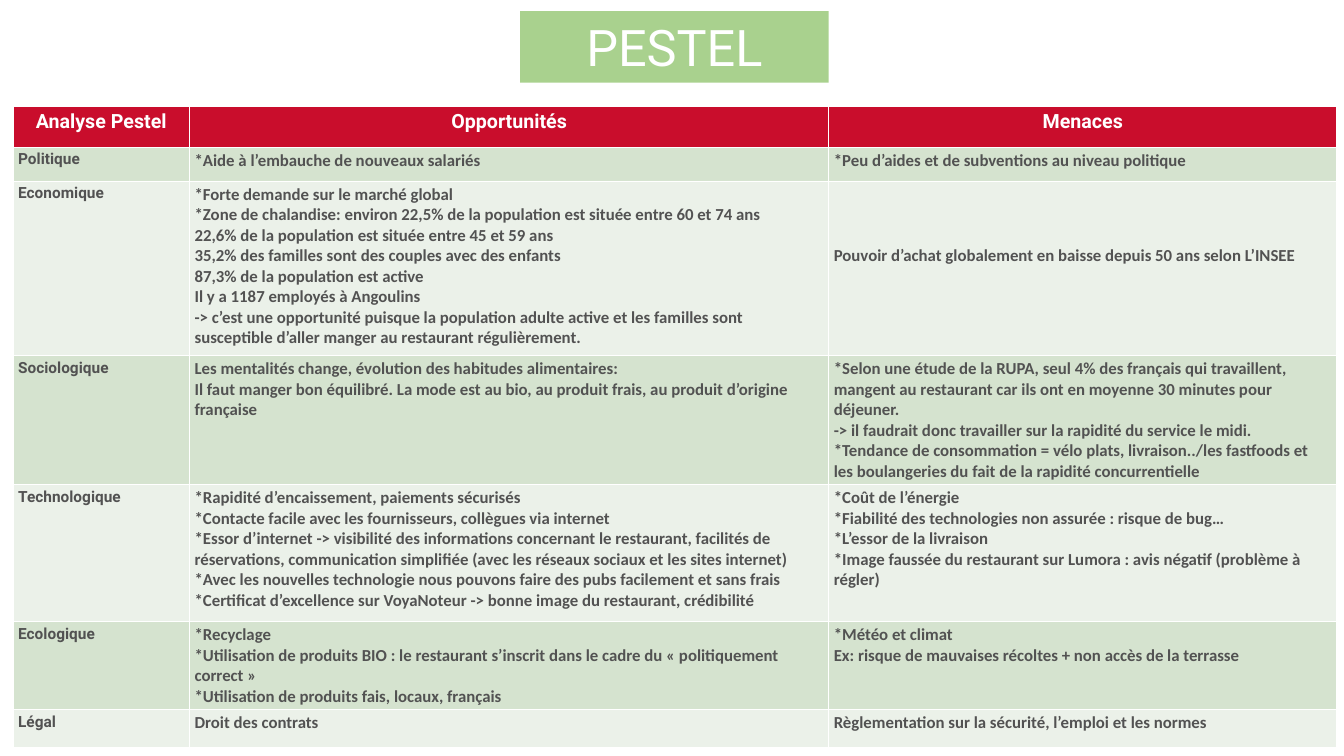
import pptx
import pptx.util
import pptx.dml.color
import pptx.enum.text

Inches = pptx.util.Inches
Pt = pptx.util.Pt
CENTER = pptx.enum.text.PP_ALIGN.CENTER
LEFT = pptx.enum.text.PP_ALIGN.LEFT


def paint(fill, color):
    fill.solid()
    fill.fore_color.rgb = pptx.dml.color.RGBColor.from_string(color)


def write(tf, text, font, size, color, bold, align):
    tf.text = text
    for p in tf.paragraphs:
        p.alignment = align
        for r in p.runs:
            r.font.name = font
            r.font.size = Pt(size)
            r.font.bold = bold
            paint(r.font.fill, color)


header = ["Analyse Pestel", "Opportunités", "Menaces"]
factors = [
    ["Politique",
     ["*Aide à l’embauche de nouveaux salariés"],
     ["*Peu d’aides et de subventions au niveau politique"]],
    ["Economique",
     ["*Forte demande sur le marché global",
      "*Zone de chalandise: environ 22,5% de la population est située entre 60 et 74 ans",
      "22,6% de la population est située entre 45 et 59 ans",
      "35,2% des familles sont des couples avec des enfants",
      "87,3% de la population est active",
      "Il y a 1187 employés à Angoulins",
      "-> c’est une opportunité puisque la population adulte active et les familles sont "
      "susceptible d’aller manger au restaurant régulièrement."],
     ["Pouvoir d’achat globalement en baisse depuis 50 ans selon L’INSEE"]],
    ["Sociologique",
     ["Les mentalités change, évolution des habitudes alimentaires:",
      "Il faut manger bon équilibré. La mode est au bio, au produit frais, "
      "au produit d’origine française"],
     ["*Selon une étude de la RUPA, seul 4% des français qui travaillent, "
      "mangent au restaurant car ils ont en moyenne 30 minutes pour déjeuner.",
      "-> il faudrait donc travailler sur la rapidité du service le midi.",
      "*Tendance de consommation = vélo plats, livraison../les fastfoods et les "
      "boulangeries du fait de la rapidité concurrentielle"]],
    ["Technologique",
     ["*Rapidité d’encaissement, paiements sécurisés",
      "*Contacte facile avec les fournisseurs, collègues via internet",
      "*Essor d’internet -> visibilité des informations concernant le restaurant, facilités de "
      "réservations, communication simplifiée (avec les réseaux sociaux et les sites internet)",
      "*Avec les nouvelles technologie nous pouvons faire des pubs facilement et sans frais",
      "*Certificat d’excellence sur VoyaNoteur -> bonne image du restaurant, crédibilité"],
     ["*Coût de l’énergie",
      "*Fiabilité des technologies non assurée : risque de bug…",
      "*L’essor de la livraison",
      "*Image faussée du restaurant sur Lumora : avis négatif (problème à régler)"]],
    ["Ecologique",
     ["*Recyclage",
      "*Utilisation de produits BIO : le restaurant s’inscrit dans le cadre du "
      "« politiquement correct »",
      "*Utilisation de produits fais, locaux, français"],
     ["*Météo et climat",
      "Ex: risque de mauvaises récoltes + non accès de la terrasse"]],
    ["Légal",
     ["Droit des contrats"],
     ["Règlementation sur la sécurité, l’emploi et les normes"]],
]
widths = [1.75, 6.34, 5.04]
heights = [0.4, 0.34, 1.73, 1.04, 1.36, 0.87, 0.38]

prs = pptx.Presentation()
prs.slide_width = Inches(13.33)
prs.slide_height = Inches(7.5)
s = prs.slides.add_slide(prs.slide_layouts[5])

title = s.shapes.title
title.left, title.top = Inches(5.16), Inches(0.11)
title.width, title.height = Inches(3.06), Inches(0.71)
paint(title.fill, "A9D18E")
write(title.text_frame, "PESTEL", "Roboto", 36, "FFFFFF", False, CENTER)
title.text_frame.auto_size = pptx.enum.text.MSO_AUTO_SIZE.NONE
title.text_frame.vertical_anchor = pptx.enum.text.MSO_ANCHOR.MIDDLE

table = s.shapes.add_table(len(heights), len(widths), Inches(0.13), Inches(1.06),
                           Inches(sum(widths)), Inches(sum(heights))).table
for column, width in zip(table.columns, widths):
    column.width = Inches(width)
for row, height in zip(table.rows, heights):
    row.height = Inches(height)

for cell in table.iter_cells():
    cell.margin_left = cell.margin_right = Inches(0.05)
    cell.margin_top = cell.margin_bottom = Inches(0.03)

for j, text in enumerate(header):
    cell = table.cell(0, j)
    paint(cell.fill, "C90D2C")
    write(cell.text_frame, text, "Roboto", 14, "FFFFFF", True, CENTER)

for i, (factor, opportunities, threats) in enumerate(factors, 1):
    for j, lines in enumerate([[factor], opportunities, threats]):
        cell = table.cell(i, j)
        paint(cell.fill, "D5E3CF" if i % 2 else "EBF1E9")
        font, size = ("Calibri", 12) if j else ("Roboto", 11)
        write(cell.text_frame, "\n".join(lines), font, size, "525252", True, LEFT)

table.cell(2, 2).margin_top = Inches(0.64)

prs.save("out.pptx")
